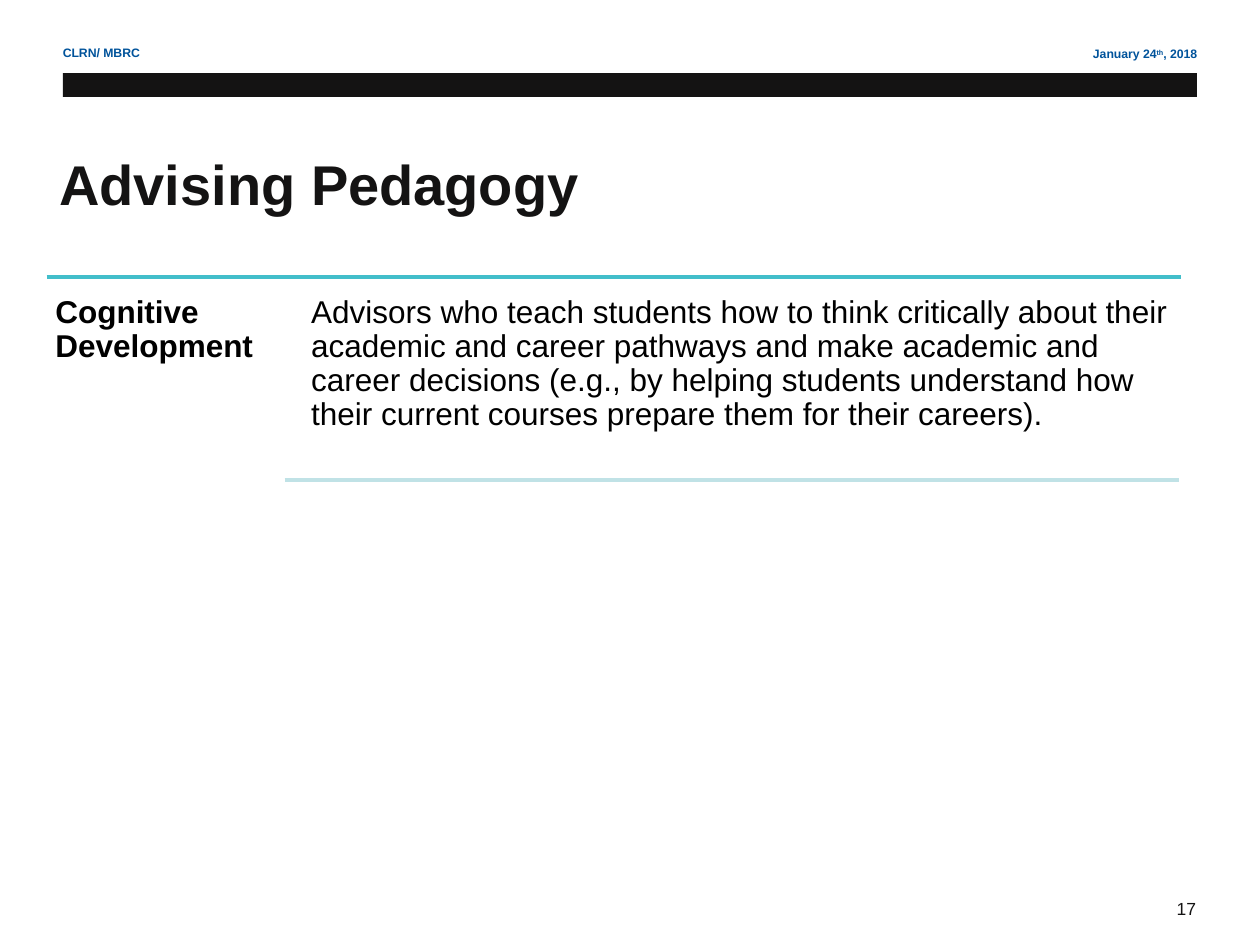
from dataclasses import dataclass

import pptx
import pptx.dml.color
import pptx.enum.shapes
import pptx.enum.text
import pptx.oxml.ns
import pptx.slide
import pptx.util
from lxml import etree

Pt = pptx.util.Pt
RGB = pptx.dml.color.RGBColor
Align = pptx.enum.text.PP_ALIGN
Anchor = pptx.enum.text.MSO_ANCHOR

INK = RGB(0x14, 0x13, 0x13)
BLACK = RGB(0, 0, 0)
BLUE = RGB(0x00, 0x53, 0x9B)
TEAL = RGB(0x42, 0xBE, 0xCA)
PALE = RGB(0xC0, 0xE2, 0xE6)


@dataclass
class Note:
    text: tuple[str, ...]
    left: float
    top: float
    width: float
    height: float
    size: float
    color: RGB
    bold: bool = False
    align: Align = Align.LEFT
    inset: tuple[float, float, float, float] = (7.2, 3.6, 7.2, 3.6)
    before: float = 0
    pitch: float = 1


@dataclass
class Rule:
    left: float
    right: float
    y: float
    color: RGB


NOTES = [
    Note(("January 24", "th", ", 2018"), 462.24, 23.04, 228.96, 15.84, 7,
         BLUE, True, Align.RIGHT, before=2.3),
    Note(("17",), 665.28, 509.76, 33.12, 19.44, 10, INK, before=5),
    Note(("CLRN/ MBRC",), 28.8, 22.32, 256.32, 15.84, 7, BLUE, True, before=2.3),
    Note(("Cognitive Development",), 26.64, 158.4, 136.8, 352.08, 18, BLACK,
         True, inset=(5.04, 10.8, 5.04, 5.04), pitch=0.9),
    Note(("Advisors who teach students how to think critically about their "
          "academic and career pathways and make academic and career decisions "
          "(e.g., by helping students understand how their current courses "
          "prepare them for their careers).",),
         172.8, 164.16, 501.84, 110.16, 18, BLACK,
         inset=(5.04,) * 4, pitch=0.9),
]
RULES = [Rule(26.64, 674.64, 158.4, TEAL), Rule(162.72, 673.92, 274.32, PALE)]


def style(font: pptx.text.text.Font, size: float, color: RGB, bold: bool) -> None:
    font.name = "Arial"
    font.size = Pt(size)
    font.bold = bold
    font.color.rgb = color


def write(page: pptx.slide.Slide, note: Note) -> pptx.text.text._Paragraph:
    box = page.shapes.add_textbox(
        Pt(note.left), Pt(note.top), Pt(note.width), Pt(note.height))
    frame = box.text_frame
    frame.word_wrap = True
    (frame.margin_left, frame.margin_top,
     frame.margin_right, frame.margin_bottom) = map(Pt, note.inset)
    para = frame.paragraphs[0]
    para.alignment = note.align
    para.space_before = Pt(note.before)
    para.line_spacing = note.pitch
    for text in note.text:
        run = para.add_run()
        run.text = text
        style(run.font, note.size, note.color, note.bold)
    return para


def draw(page: pptx.slide.Slide, rule: Rule) -> None:
    line = page.shapes.add_connector(
        pptx.enum.shapes.MSO_CONNECTOR.STRAIGHT,
        Pt(rule.left), Pt(rule.y), Pt(rule.right), Pt(rule.y))
    line.line.color.rgb = rule.color
    line.line.width = Pt(2)
    etree.SubElement(line._element.spPr, pptx.oxml.ns.qn("a:effectLst"))


def add_band(page: pptx.slide.Slide) -> None:
    band = page.shapes.add_shape(
        pptx.enum.shapes.MSO_SHAPE.RECTANGLE, Pt(36), Pt(41.76), Pt(648), Pt(13.68))
    band.shadow.inherit = False
    band.fill.solid()
    band.fill.fore_color.rgb = INK
    band.line.fill.background()


def set_title(page: pptx.slide.Slide) -> None:
    title = page.shapes.title
    title.left, title.top = Pt(26.64), Pt(59.76)
    title.width, title.height = Pt(648), Pt(90)
    frame = title.text_frame
    frame.text = "Advising Pedagogy"
    frame.vertical_anchor = Anchor.MIDDLE
    para = frame.paragraphs[0]
    para.alignment = Align.LEFT
    style(para.runs[0].font, 32, INK, True)


def main() -> None:
    deck = pptx.Presentation()
    deck.slide_width, deck.slide_height = Pt(720), Pt(540)
    page = deck.slides.add_slide(deck.slide_layouts[5])
    set_title(page)
    add_band(page)
    date, *_ = [write(page, note) for note in NOTES]
    date.runs[1]._r.get_or_add_rPr().set("baseline", "30000")
    for rule in RULES:
        draw(page, rule)
    deck.save("out.pptx")


if __name__ == "__main__":
    main()
